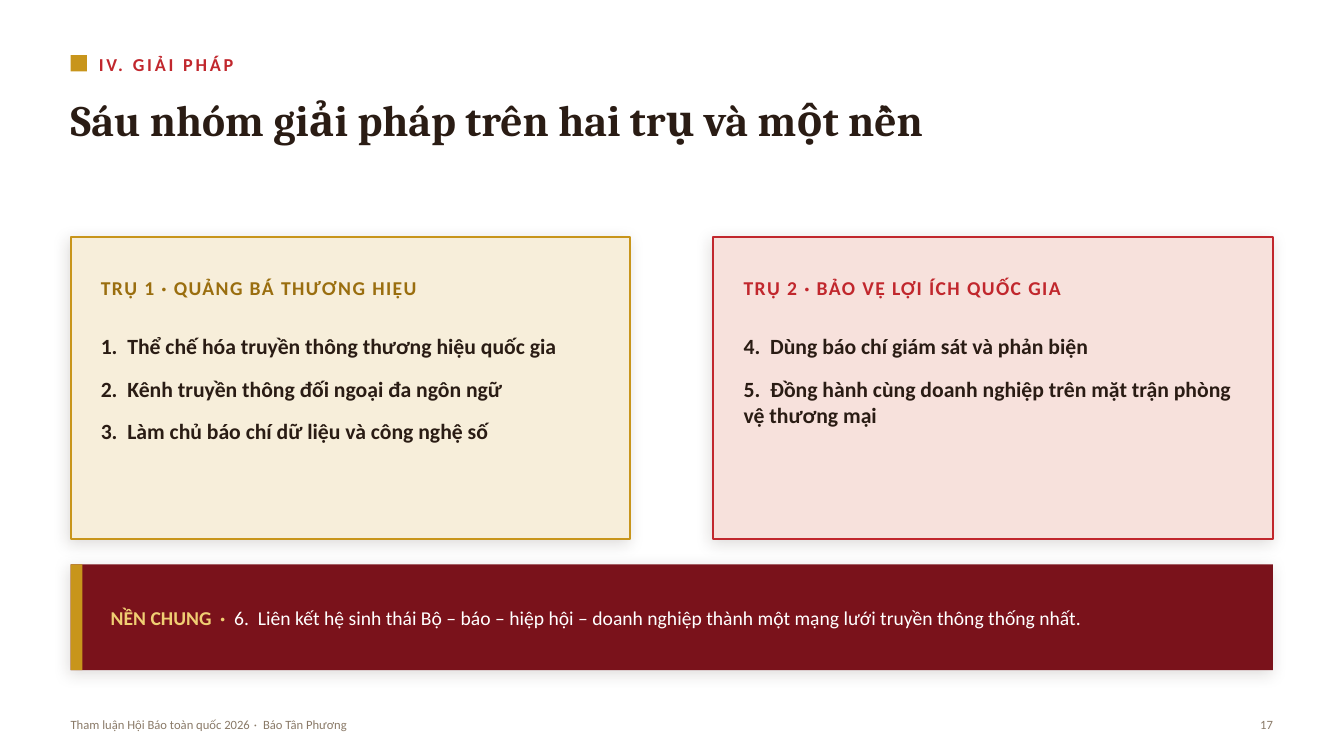
from lxml.etree import SubElement
from pptx import Presentation
from pptx.dml.color import RGBColor
from pptx.enum.shapes import MSO_SHAPE as Shape
from pptx.enum.text import MSO_ANCHOR as Anchor, MSO_AUTO_SIZE as AutoSize, PP_ALIGN as Align
from pptx.oxml.ns import qn
from pptx.util import Cm, Pt

GOLD, RED, INK, MUTED = "C8951B", "C1272D", "2A1C14", "8A7A68"
MARGIN, CONTENT_WIDTH = 1.78, 30.3


def paint(target, color):
    if hasattr(target, "solid"):
        target.solid()
        target = target.fore_color
    target.rgb = RGBColor.from_string(color)


def add_shadow(shape):
    effects = shape._element.spPr.find(qn("a:effectLst"))
    shadow = SubElement(effects, qn("a:outerShdw"), blurRad=str(Pt(11)), dist=str(Pt(3)),
                        dir=str(135 * 60000), algn="ctr", rotWithShape="0")
    tint = SubElement(shadow, qn("a:srgbClr"), val=INK)
    SubElement(tint, qn("a:alpha"), val="14000")


def add_panel(page, left, top, width, height, fill, line=None, raised=False):
    panel = page.shapes.add_shape(Shape.RECTANGLE, Cm(left), Cm(top), Cm(width), Cm(height))
    panel.shadow.inherit = False
    paint(panel.fill, fill)
    if line:
        paint(panel.line.color, line)
        panel.line.width = Pt(1.5)
    else:
        panel.line.fill.background()
    if raised:
        add_shadow(panel)


def set_frame(box, anchor):
    frame = box.text_frame
    frame.word_wrap = True
    frame.auto_size = AutoSize.NONE
    frame.vertical_anchor = anchor
    frame.margin_left = frame.margin_top = frame.margin_right = frame.margin_bottom = 0
    return frame


def add_span(para, text, size, color, bold=False, font="Calibri", spacing=0):
    span = para.add_run()
    span.text = text
    span.font.name = font
    span.font.size = Pt(size)
    span.font.bold = bold
    paint(span.font.color, color)
    if spacing:
        span._r.get_or_add_rPr().set("spc", str(spacing * 100))


def set_tabs(para, stops):
    tabs = SubElement(para._p.get_or_add_pPr(), qn("a:tabLst"))
    for stop in stops:
        SubElement(tabs, qn("a:tab"), pos=str(Cm(stop)), algn="l")


def add_text(page, left, top, width, height, anchor=Anchor.MIDDLE):
    box = page.shapes.add_textbox(Cm(left), Cm(top), Cm(width), Cm(height))
    return set_frame(box, anchor)


def add_header(page, left, top, width, section, heading):
    add_panel(page, left, top + 0.2, 0.41, 0.41, GOLD)
    label = add_text(page, left + 0.71, top, width - 0.76, 0.86)
    add_span(label.paragraphs[0], section, 13, RED, True, spacing=2)

    title = page.shapes.title
    title.left, title.top, title.width, title.height = Cm(left), Cm(top + 1.15), Cm(width), Cm(2.54)
    para = set_frame(title, Anchor.TOP).paragraphs[0]
    para.alignment = Align.LEFT
    add_span(para, heading, 31, INK, True, "Cambria")


def add_pillar(page, left, top, width, height, heading, items, first, fill, accent, heading_color):
    add_panel(page, left, top, width, height, fill, accent, True)
    inner_left, inner_width = left + 0.76, width - 1.52
    label = add_text(page, inner_left, top + 0.64, inner_width, 1.27)
    add_span(label.paragraphs[0], heading, 14, heading_color, True, spacing=1)

    frame = add_text(page, inner_left, top + 2.41, inner_width, height - 2.79, Anchor.TOP)
    for index, item in enumerate(items):
        para = frame.add_paragraph() if index else frame.paragraphs[0]
        para.space_after = Pt(12)
        set_tabs(para, [0.67])
        add_span(para, f"{first + index}.\t{item}", 15.5, INK, True)


def add_foundation(page, left, top, width, height, label, statement):
    add_panel(page, left, top, width, height, "7A121B", raised=True)
    add_panel(page, left, top, 0.3, height, GOLD)
    para = add_text(page, left + 1.01, top, width - 1.78, height).paragraphs[0]
    para.line_spacing = 1.05
    set_tabs(para, [2.76, 3.11, 3.71])
    add_span(para, f"{label}\t·\t", 14, "F0CE73", True)
    add_span(para, statement, 14, "FFFFFF")


def add_footer(page, left, top, width, height, event, publisher, number):
    para = add_text(page, left, top, 22.86, height).paragraphs[0]
    set_tabs(para, [4.62, 4.85])
    add_span(para, f"{event}\t·\t{publisher}", 9, MUTED)
    para = add_text(page, left + width - 1.52, top, 1.52, height).paragraphs[0]
    para.alignment = Align.RIGHT
    add_span(para, number, 9, MUTED)


def main():
    deck = Presentation()
    deck.slide_width, deck.slide_height = Cm(33.87), Cm(19.05)
    page = deck.slides.add_slide(deck.slide_layouts[5])
    add_header(page, MARGIN, 1.19, CONTENT_WIDTH, "IV. GIẢI PHÁP",
               "Sáu nhóm giải pháp trên hai trụ và một nền")

    pillars = [
        ("TRỤ 1 · QUẢNG BÁ THƯƠNG HIỆU",
         ["Thể chế hóa truyền thông thương hiệu quốc gia",
          "Kênh truyền thông đối ngoại đa ngôn ngữ",
          "Làm chủ báo chí dữ liệu và công nghệ số"],
         1, "F7EEDA", GOLD, "9A6E0F"),
        ("TRỤ 2 · BẢO VỆ LỢI ÍCH QUỐC GIA",
         ["Dùng báo chí giám sát và phản biện",
          "Đồng hành cùng doanh nghiệp trên mặt trận phòng vệ thương mại"],
         4, "F7E1DC", RED, RED),
    ]
    pillar_width = 14.1
    pitch = CONTENT_WIDTH - pillar_width
    for column, pillar in enumerate(pillars):
        add_pillar(page, MARGIN + column * pitch, 5.97, pillar_width, 7.62, *pillar)

    add_foundation(page, MARGIN, 14.22, CONTENT_WIDTH, 2.67, "NỀN CHUNG",
                   "6.\tLiên kết hệ sinh thái Bộ – báo – hiệp hội – doanh nghiệp "
                   "thành một mạng lưới truyền thông thống nhất.")
    add_footer(page, MARGIN, 17.88, CONTENT_WIDTH, 0.76,
               "Tham luận Hội Báo toàn quốc 2026", "Báo Tân Phương", "17")
    deck.save("out.pptx")


if __name__ == "__main__":
    main()
